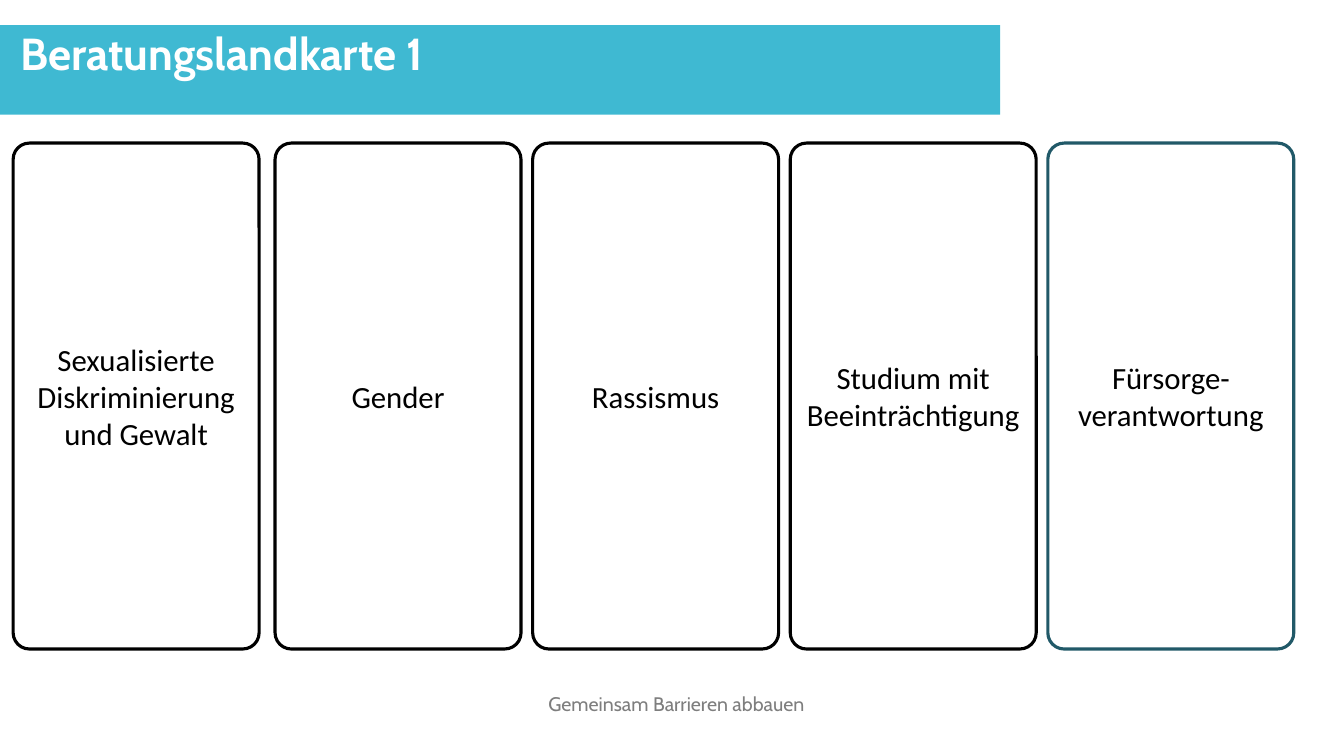
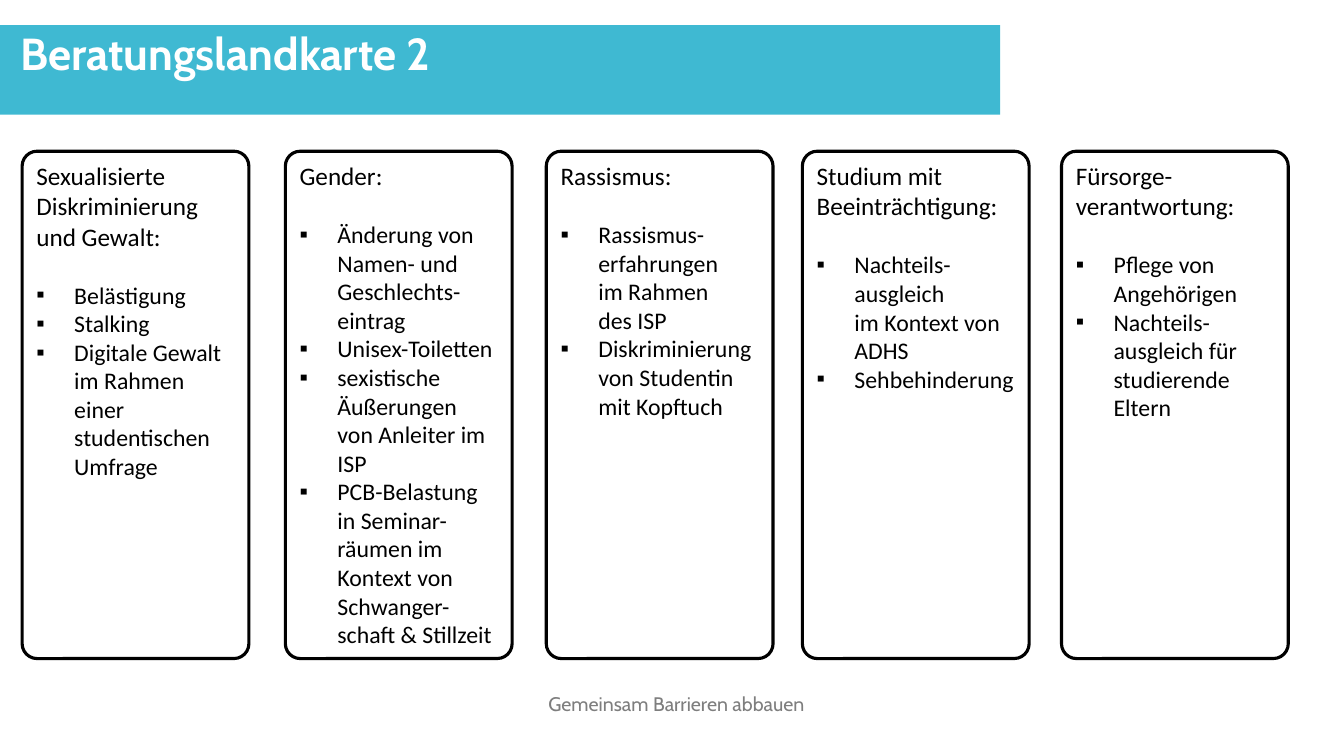
"""Build the two slides of the counselling map."""
from lxml.etree import SubElement
from pptx import Presentation
from pptx.dml.color import RGBColor
from pptx.enum.shapes import MSO_SHAPE as Preset
from pptx.enum.text import MSO_ANCHOR as Anchor, PP_ALIGN as Align
from pptx.oxml.ns import qn
from pptx.util import Pt

TURQUOISE = RGBColor(0x3F, 0xB9, 0xD2)
WHITE = RGBColor(0xFF, 0xFF, 0xFF)
BLACK = RGBColor(0x00, 0x00, 0x00)
PETROL = RGBColor(0x21, 0x59, 0x68)
GREY = RGBColor(0x7E, 0x7E, 0x7E)
HEADING_FONT = "Cabin"
BODY_FONT = "Calibri"

TOPICS = [
    ("Sexualisierte Diskriminierung und Gewalt",
     ["Belästigung", "Stalking",
      "Digitale Gewalt im Rahmen einer studentischen Umfrage"]),
    ("Gender",
     ["Änderung von Namen- und Geschlechts-eintrag", "Unisex-Toiletten",
      "sexistische Äußerungen von Anleiter im ISP",
      "PCB-Belastung in Seminar-räumen im Kontext von Schwanger-schaft & Stillzeit"]),
    ("Rassismus",
     ["Rassismus-erfahrungen\vim Rahmen\vdes ISP",
      "Diskriminierung von Studentin mit Kopftuch"]),
    ("Studium mit Beeinträchtigung",
     ["Nachteils-ausgleich\vim Kontext von ADHS", "Sehbehinderung"]),
    ("Fürsorge-verantwortung",
     ["Pflege von Angehörigen",
      "Nachteils-ausgleich für studierende Eltern"]),
]
OVERVIEW_LEFTS = [9.4, 196.5, 380.5, 564.5, 748.5]
DETAIL_LEFTS = [15.8, 203.8, 390.2, 573.1, 758.2]

deck = Presentation()
deck.slide_width, deck.slide_height = Pt(960), Pt(540)
layout = deck.slide_layouts[5]


def style(paragraph, size, colour=BLACK, font=BODY_FONT, align=Align.LEFT, bold=False):
    paragraph.alignment = align
    paragraph.font.name = font
    paragraph.font.size = Pt(size)
    paragraph.font.bold = bold
    paragraph.font.color.rgb = colour


def add_card(slide, left, top, width, height, colour=BLACK):
    card = slide.shapes.add_shape(
        Preset.ROUNDED_RECTANGLE, Pt(left), Pt(top), Pt(width), Pt(height))
    card.adjustments[0] = 0.066
    card.shadow.inherit = False
    card.fill.background()
    card.line.color.rgb = colour
    card.line.width = Pt(2.25)
    card.text_frame.word_wrap = True
    return card.text_frame


slides = []
for heading in ("Beratungslandkarte 1", "Beratungslandkarte 2"):
    slide = deck.slides.add_slide(layout)
    slides.append(slide)
    title = slide.shapes.title
    title.left, title.top, title.width, title.height = Pt(0), Pt(18.5), Pt(714), Pt(73.5)
    title_text = title.text_frame
    title_text.text = heading
    title_text.vertical_anchor = Anchor.TOP
    title_text.margin_left = title_text.margin_right = Pt(14.4)
    title_text.margin_top = title_text.margin_bottom = 0
    style(title_text.paragraphs[0], 32, WHITE, HEADING_FONT, bold=True)

    footer = slide.shapes.add_textbox(Pt(336), Pt(502), Pt(294.5), Pt(9.4)).text_frame
    footer.word_wrap = True
    footer.margin_left = footer.margin_right = footer.margin_top = footer.margin_bottom = 0
    footer.text = "Gemeinsam Barrieren abbauen"
    footer.paragraphs[0].line_spacing = Pt(9.1)
    style(footer.paragraphs[0], 14, GREY, HEADING_FONT, Align.CENTER)

overview, details = slides

band = overview.shapes.add_shape(Preset.RECTANGLE, Pt(0), Pt(18), Pt(714.5), Pt(64))
band.shadow.inherit = False
band.fill.solid()
band.fill.fore_color.rgb = TURQUOISE
band.line.fill.background()
layout.shapes.element.insert(2, band.element)

for (topic, _), left in zip(TOPICS, OVERVIEW_LEFTS):
    outline = PETROL if left == OVERVIEW_LEFTS[-1] else BLACK
    label = add_card(overview, left, 102.2, 175.7, 361.4, outline)
    label.vertical_anchor = Anchor.MIDDLE
    label.text = topic
    style(label.paragraphs[0], 22, align=Align.CENTER)

for (topic, cases), left in zip(TOPICS, DETAIL_LEFTS):
    content = add_card(details, left, 108, 162, 362.4)
    content.vertical_anchor = Anchor.TOP
    content.text = f"{topic}:"
    style(content.paragraphs[0], 18)
    for position, case in enumerate(cases):
        entry = content.add_paragraph()
        entry.text = case
        entry.space_before = Pt(0 if position else 20.75)
        properties = entry._p.get_or_add_pPr()
        properties.set("marL", str(Pt(27)))
        properties.set("indent", str(-Pt(27)))
        SubElement(properties, qn("a:buFont")).set("typeface", "Arial")
        SubElement(properties, qn("a:buChar")).set("char", "▪")
        style(entry, 17)

deck.save("out.pptx")
